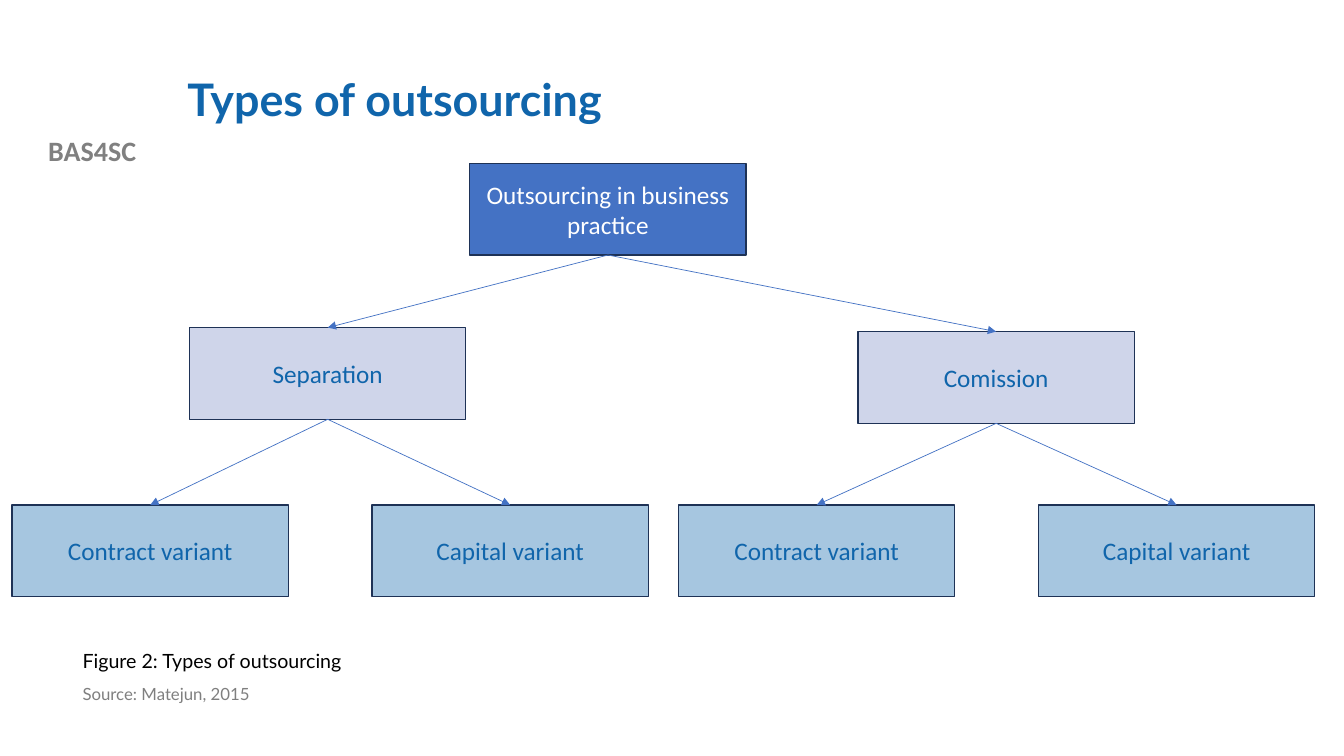
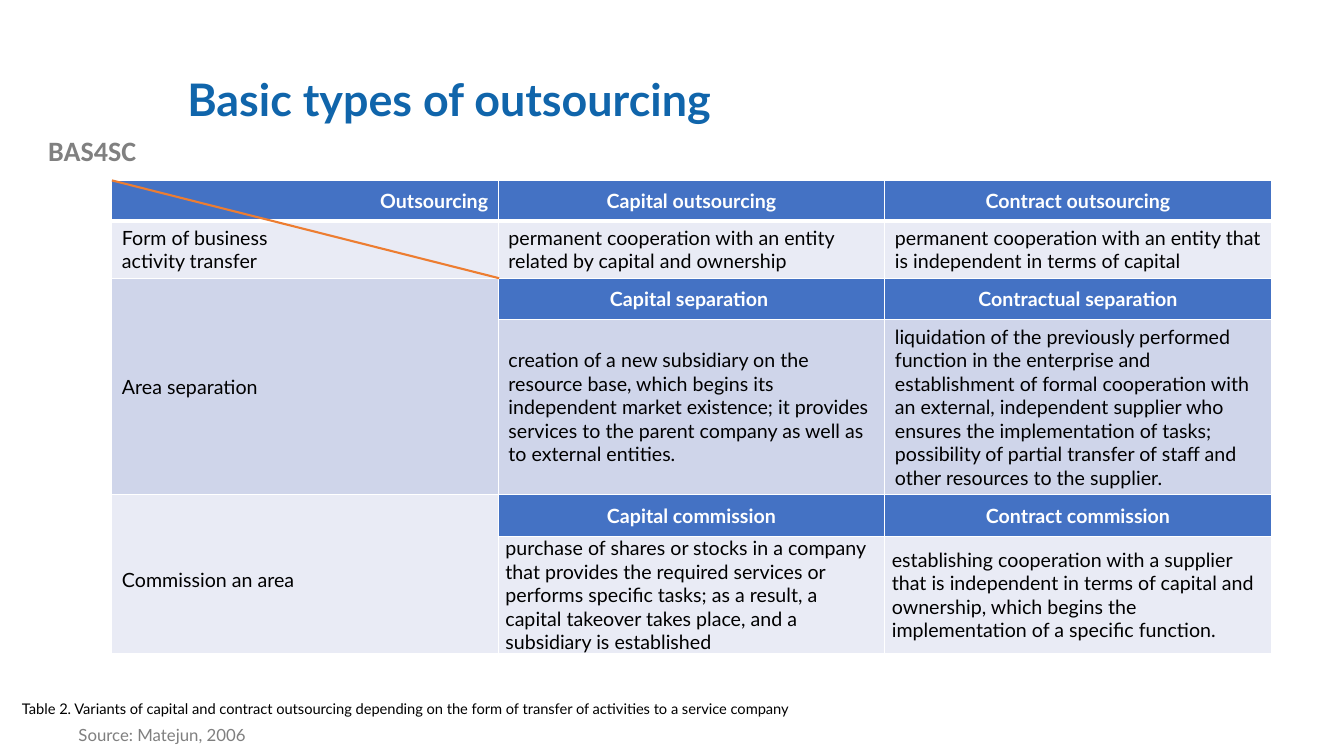
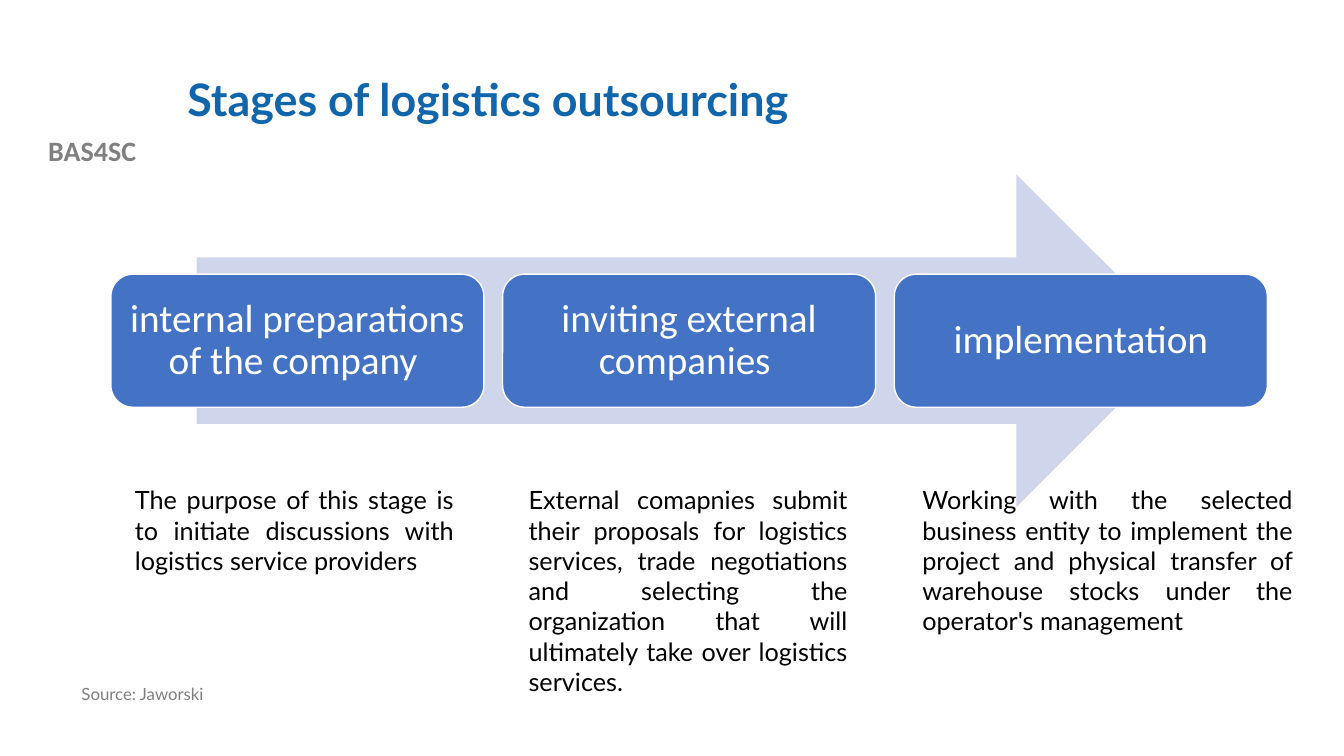
from pptx import Presentation
from pptx.dml.color import RGBColor
from pptx.enum.shapes import MSO_CONNECTOR, MSO_SHAPE
from pptx.enum.text import MSO_ANCHOR, PP_ALIGN
from pptx.oxml.ns import qn
from pptx.util import Inches, Pt
from lxml.etree import SubElement

HUES = {
    "title": "1065AB", "brand": "808080", "source": "7F7F7F",
    "blue": "4472C4", "edge": "1E3256", "pale": "CFD5EA", "sky": "A6C6E0",
    "mist": "E9EBF5", "slash": "ED7D31", "white": "FFFFFF", "black": "000000",
}
LEFT, MID, RIGHT, JUST = PP_ALIGN.LEFT, PP_ALIGN.CENTER, PP_ALIGN.RIGHT, PP_ALIGN.JUSTIFY


def hue(name):
    return RGBColor.from_string(HUES[name])


class Deck:
    def __init__(self):
        self.prs = Presentation()
        self.prs.slide_width = Inches(13.33)
        self.prs.slide_height = Inches(7.5)

    def page(self, title, source, left=0.72, top=6.76):
        """Start a slide with its title, course name and source."""
        self.slide = self.prs.slides.add_slide(self.prs.slide_layouts[6])
        self.shapes = self.slide.shapes
        self.text("BAS4SC", (0, 1.28, 1.83, 0.44), 20, "brand", MID, "Calibri", bold=True)
        self.text(title, (1.76, 0.4, 10.66, 1.22), 32, "title", bold=True,
                  anchor=MSO_ANCHOR.MIDDLE, space=0.9)
        self.text(source, (left, top, 5.01, 0.34), 12, "source", space=0.9)

    def style(self, frame, text, size, color, align=LEFT, font="Lato",
              bold=False, space=None):
        frame.text = text
        par = frame.paragraphs[0]
        par.alignment = align
        if space:
            par.line_spacing = space
        for run in par.runs:
            run.font.name = font
            run.font.size = Pt(size)
            run.font.bold = bold
            run.font.color.rgb = hue(color)

    def text(self, text, area, size, color="black", align=LEFT, font="Lato",
             bold=False, anchor=MSO_ANCHOR.TOP, space=None):
        frame = self.shapes.add_textbox(*map(Inches, area)).text_frame
        frame.word_wrap = True
        frame.vertical_anchor = anchor
        self.style(frame, text, size, color, align, font, bold, space)

    def shape(self, kind, area, fill, edge=None):
        shape = self.shapes.add_shape(kind, *map(Inches, area))
        shape.shadow.inherit = False
        shape.fill.solid()
        shape.fill.fore_color.rgb = hue(fill)
        if edge:
            shape.line.color.rgb = hue(edge)
            shape.line.width = Pt(1)
        else:
            shape.line.fill.background()
        return shape

    def node(self, text, left, top, fill, color="title"):
        box = self.shape(MSO_SHAPE.RECTANGLE, (left, top, 2.74, 0.91), fill, "edge")
        self.style(box.text_frame, text, 18, color, MID, "Calibri")
        return box

    def step(self, text, left):
        box = self.shape(MSO_SHAPE.ROUNDED_RECTANGLE, (left, 2.72, 3.7, 1.32), "blue", "white")
        frame = box.text_frame
        frame.margin_left = frame.margin_right = Inches(0.11)
        self.style(frame, text, 28, "white", MID, "Calibri", space=0.9)

    def line(self, ends, color, width):
        line = self.shapes.add_connector(MSO_CONNECTOR.STRAIGHT, *map(Inches, ends))
        line.line.color.rgb = hue(color)
        line.line.width = Pt(width)
        SubElement(line._element.spPr, qn("a:effectLst"))
        return line

    def link(self, top, low):
        """Draw an arrow from the foot of one box to the head of another."""
        line = self.line((0, 0, 1, 1), "blue", 0.5)
        line.begin_connect(top, 2)
        line.end_connect(low, 0)
        SubElement(line._element.spPr.get_or_add_ln(), qn("a:tailEnd"), type="triangle")

    def grid(self, area, rows, highs):
        table = self.shapes.add_table(len(rows), len(rows[0]), *map(Inches, area)).table
        for row, high in zip(table.rows, highs):
            row.height = Inches(high)
        for r, row in enumerate(rows):
            for c, text in enumerate(row):
                self.cell(table.cell(r, c), text, r, c)
        for r in (2, 4):
            table.cell(r, 0).merge(table.cell(r + 1, 0))

    def cell(self, cell, text, r, c):
        head = r == 0 or (r in (2, 4) and c > 0)
        props = cell._tc.get_or_add_tcPr()
        for side in "LRTB":
            thick = (r, side) in ((0, "B"), (1, "T"))
            edge = SubElement(props, qn("a:ln" + side), w=str(Pt(3 if thick else 1)))
            fill = SubElement(edge, qn("a:solidFill"))
            SubElement(fill, qn("a:srgbClr"), val=HUES["white"])
        cell.fill.solid()
        band = "pale" if r in (2, 3) else "mist"
        cell.fill.fore_color.rgb = hue("blue" if head else band)
        cell.vertical_anchor = MSO_ANCHOR.MIDDLE
        if not text:
            return
        align = (MID if c else RIGHT) if head else LEFT
        self.style(cell.text_frame, text, 14, "white" if head else "black", align, bold=head)
        par = cell.text_frame.paragraphs[0]
        if r >= 4 and not head:
            par.space_after = Pt(6)
            if c == 0:
                par.alignment = JUST
                par.line_spacing = 1.5
        if r == 5:
            cell.margin_left = cell.margin_right = Inches(0.07)
            cell.margin_top = cell.margin_bottom = 0


def types(deck):
    deck.page("Types of outsourcing", "Source: Matejun, 2015")
    root = deck.node("Outsourcing in business practice", 4.66, 1.62, "blue", "white")
    for name, left, top, first in (("Separation", 1.88, 3.25, 0.12),
                                   ("Comission", 8.51, 3.29, 6.73)):
        branch = deck.node(name, left, top, "pale")
        deck.link(root, branch)
        for i, kind in enumerate(("Contract", "Capital")):
            leaf = deck.node(kind + " variant", first + i * 3.57, 5.01, "sky")
            deck.link(branch, leaf)
    deck.text("Figure 2: Types of outsourcing", (0.72, 6.39, 4.39, 0.34), 14)


def basics(deck):
    deck.page("Basic types of outsourcing", "Source: Matejun, 2006", 0.68, 7.16)
    deck.text("Table 2. Variants of capital and contract outsourcing depending on the form "
              "of transfer of activities to a service company", (0.12, 6.89, 8.53, 0.29), 10.5)
    rows = (
        ("Outsourcing", "Capital outsourcing", "Contract outsourcing"),
        ("Form of business \vactivity transfer",
         "permanent cooperation with an entity related by capital and ownership",
         "permanent cooperation with an entity that is independent in terms of capital"),
        ("Area separation", "Capital separation ", "Contractual separation"),
        ("",
         "creation of a new subsidiary on the resource base, which begins its independent "
         "market existence; it provides services to the parent company as well as to "
         "external entities.",
         "liquidation of the previously performed function in the enterprise and "
         "establishment of formal cooperation with an external, independent supplier who "
         "ensures the implementation of tasks; possibility of partial transfer of staff "
         "and other resources to the supplier."),
        ("Commission an area", "Capital commission", "Contract commission"),
        ("",
         "purchase of shares or stocks in a company that provides the required services or "
         "performs specific tasks; as a result, a capital takeover takes place, and a "
         "subsidiary is established",
         "establishing cooperation with a supplier that is independent in terms of capital "
         "and ownership, which begins the implementation of a specific function."),
    )
    deck.grid((1.11, 1.79, 11.5, 4.68), rows, (0.4, 0.57, 0.41, 1.74, 0.41, 1.16))
    deck.line((1.11, 1.79, 4.95, 2.76), "slash", 1.5)


def stages(deck):
    deck.page("Stages of logistics outsourcing", "Source: Jaworski", 0.71)
    deck.shape(MSO_SHAPE.RIGHT_ARROW, (1.95, 1.73, 9.78, 3.3), "pale")
    steps = (
        ("internal preparations of the company ", 3.36,
         "The purpose of this stage is to initiate discussions with logistics service providers"),
        ("inviting external companies ", 3.36,
         "External comapnies submit their proposals for logistics services, trade negotiations "
         "and selecting the organization that will ultimately take over logistics services."),
        ("implementation", 3.87,
         "Working with the selected business entity to implement the project and physical "
         "transfer of warehouse stocks under the operator's management"),
    )
    for i, (name, width, note) in enumerate(steps):
        deck.step(name, 1.1 + i * 3.885)
        deck.text(note, (1.24 + i * 3.905, 4.76, width, 2.22), 18, align=JUST)


def main():
    deck = Deck()
    types(deck)
    basics(deck)
    stages(deck)
    deck.prs.save("out.pptx")


if __name__ == "__main__":
    main()
